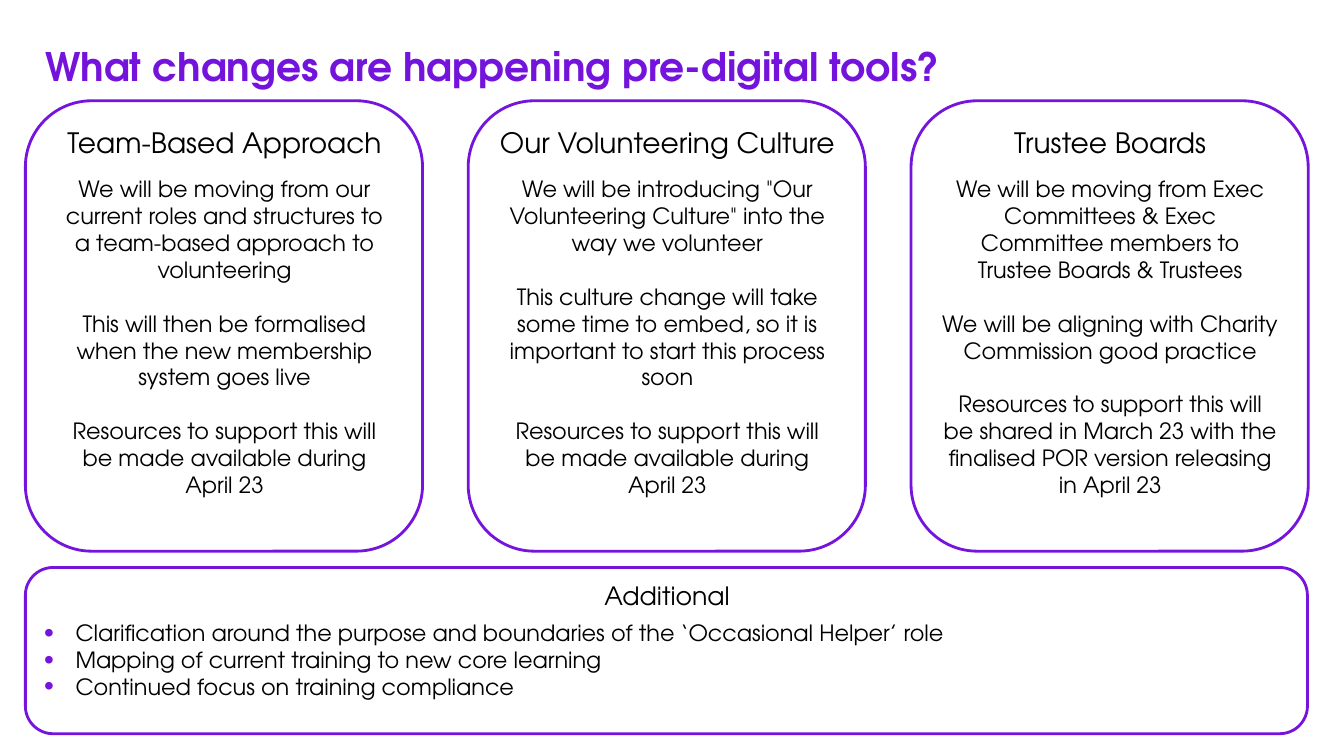
from lxml import etree
from pptx import Presentation
from pptx import util as u
from pptx.dml.color import RGBColor
from pptx.enum import shapes, text
from pptx.oxml.ns import qn

FONT = "TeX Gyre Adventor"
TITLE_PURPLE = RGBColor(0x74, 0x13, 0xDC)
PURPLE = RGBColor(0x74, 0x14, 0xDC)
BLACK = RGBColor(0, 0, 0)

LEFT = 0.64
CARD_PITCH = 11.16
BLANK_LINE = 19.2

CARDS = [
    ("Team-Based Approach", [
        "We will be moving from our current roles and structures to a team-based approach to volunteering",
        "This will then be formalised when the new membership system goes live",
        "Resources to support this will be made available during April 23",
    ]),
    ("Our Volunteering Culture", [
        'We will be introducing "Our Volunteering Culture" into the way we volunteer',
        "This culture change will take some time to embed, so it is important to start this process soon",
        "Resources to support this will be made available during April 23",
    ]),
    ("Trustee Boards", [
        "We will be moving from Exec Committees & Exec Committee members to Trustee Boards & Trustees",
        "We will be aligning with Charity Commission good practice",
        "Resources to support this will be shared in March 23 with the finalised POR version releasing in April 23",
    ]),
]
ADDITIONAL = [
    "Clarification around the purpose and boundaries of the ‘Occasional Helper’ role",
    "Mapping of current training to new core learning",
    "Continued focus on training compliance",
]


def add_run(paragraph, words, size, color=BLACK, bold=False):
    run = paragraph.add_run()
    run.text = words
    run.font.name = FONT
    run.font.size = u.Pt(size)
    run.font.bold = bold
    run.font.color.rgb = color


def set_indent(paragraph, margin, first_line=0):
    properties = paragraph._p.get_or_add_pPr()
    properties.set("marL", str(u.Cm(margin)))
    properties.set("indent", str(u.Cm(first_line)))
    return properties


def set_bullet(paragraph):
    properties = set_indent(paragraph, 0.81, -0.79)
    color = etree.SubElement(properties, qn("a:buClr"))
    etree.SubElement(color, qn("a:srgbClr"), val=str(PURPLE))
    etree.SubElement(properties, qn("a:buSzPct"), val="125000")
    etree.SubElement(properties, qn("a:buFont"), typeface="Arial")
    etree.SubElement(properties, qn("a:buChar"), char="•")


def add_title(slide, words):
    title = slide.shapes.title
    title.left, title.top = u.Cm(0.71), u.Cm(0.94)
    title.width, title.height = u.Cm(25.25), u.Cm(1.45)
    frame = title.text_frame
    frame.auto_size = text.MSO_AUTO_SIZE.NONE
    frame.vertical_anchor = text.MSO_ANCHOR.MIDDLE
    paragraph = frame.paragraphs[0]
    paragraph.alignment = text.PP_ALIGN.LEFT
    set_indent(paragraph, 0.18)
    add_run(paragraph, words, 28, TITLE_PURPLE, True)


def add_panel(slide, left, top, width, height, heading, heading_size, space_after):
    panel = slide.shapes.add_shape(
        shapes.MSO_SHAPE.ROUNDED_RECTANGLE,
        u.Cm(left), u.Cm(top), u.Cm(width), u.Cm(height))
    panel.shadow.inherit = False
    panel.fill.background()
    panel.line.color.rgb = PURPLE
    panel.line.width = u.Pt(2)
    frame = panel.text_frame
    frame.word_wrap = True
    frame.vertical_anchor = text.MSO_ANCHOR.TOP
    paragraph = frame.paragraphs[0]
    paragraph.alignment = text.PP_ALIGN.CENTER
    paragraph.space_after = u.Pt(space_after)
    set_indent(paragraph, 0.03)
    add_run(paragraph, heading, heading_size)
    return frame


def add_card(slide, left, heading, statements):
    frame = add_panel(slide, left, 2.54, 10.01, 11.35, heading, 20, 12)
    for index, statement in enumerate(statements):
        paragraph = frame.add_paragraph()
        paragraph.alignment = text.PP_ALIGN.CENTER
        if index:
            paragraph.space_before = u.Pt(BLANK_LINE)
        set_indent(paragraph, 0.03)
        add_run(paragraph, statement, 16)


def add_bullet_panel(slide, heading, items):
    frame = add_panel(slide, LEFT, 14.3, 32.31, 4.19, heading, 18, 6)
    for item in items:
        paragraph = frame.add_paragraph()
        paragraph.alignment = text.PP_ALIGN.LEFT
        set_bullet(paragraph)
        add_run(paragraph, item, 16)


def main():
    presentation = Presentation()
    presentation.slide_width = u.Cm(33.87)
    presentation.slide_height = u.Cm(19.05)
    slide = presentation.slides.add_slide(presentation.slide_layouts[5])
    add_title(slide, "What changes are happening pre-digital tools?")
    for column, (heading, statements) in enumerate(CARDS):
        add_card(slide, LEFT + column * CARD_PITCH, heading, statements)
    add_bullet_panel(slide, "Additional", ADDITIONAL)
    presentation.save("out.pptx")


if __name__ == "__main__":
    main()
